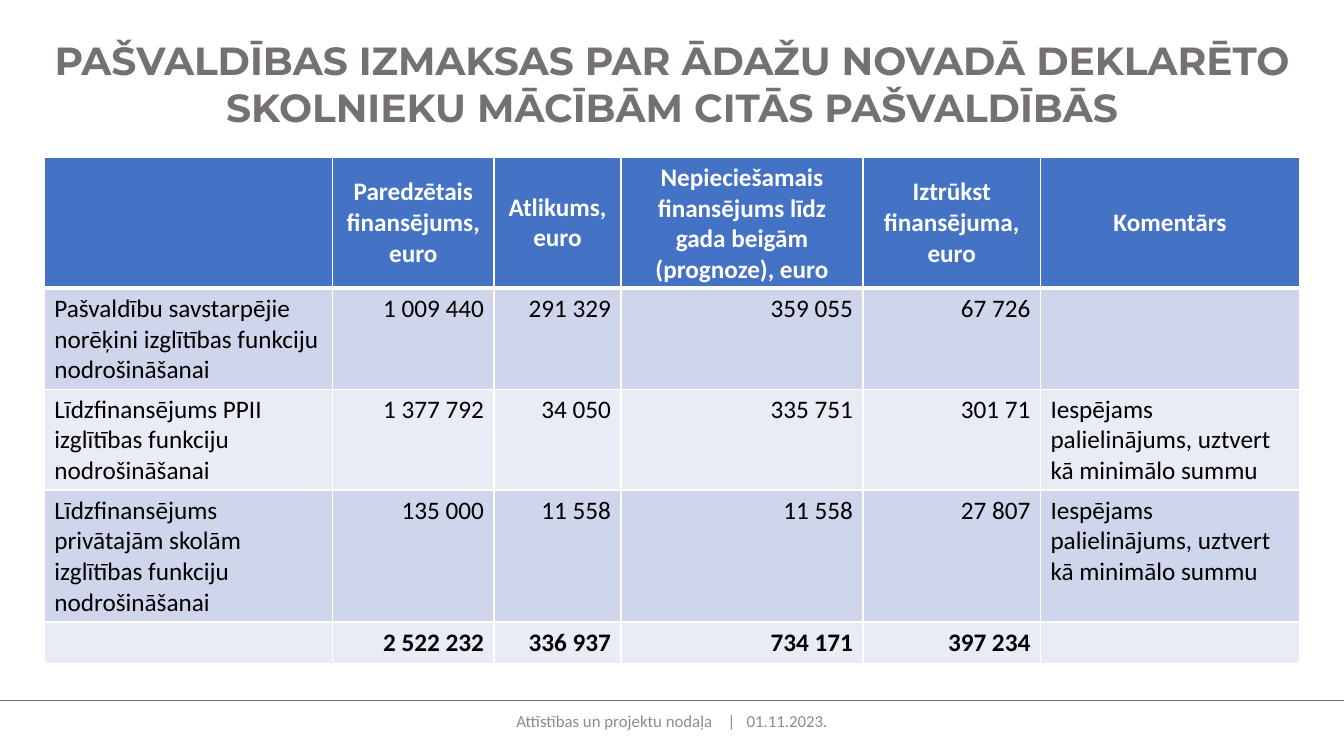
import pptx
import pptx.dml.color
import pptx.enum.shapes
import pptx.enum.text
import pptx.oxml
import pptx.oxml.ns
import pptx.util

WIDTH = pptx.util.Inches(13.33)
HEIGHT = pptx.util.Inches(7.5)
MARGIN = 0.033
CONTENT = 1 - 2 * MARGIN
RULE_Y = 0.927
GREY = "767171"
WHITE = "FFFFFF"
HEADER_FILL = "4472C4"
BAND_FILLS = ("E9EBF5", "CFD5EA")
COLUMN_WEIGHTS = (2.86, 1.6, 1.26, 2.4, 1.76, 2.57)
ROW_HEIGHTS = (1.29, 1, 1, 1.31, 0.41)
ALIGN = pptx.enum.text.PP_ALIGN
ANCHOR = pptx.enum.text.MSO_ANCHOR

TITLE = "PAŠVALDĪBAS IZMAKSAS PAR ĀDAŽU NOVADĀ DEKLARĒTO SKOLNIEKU MĀCĪBĀM CITĀS PAŠVALDĪBĀS"
FOOTER = (("Attīstības un projektu nodaļa", 0), (" ", 800), ("|", 0), (" ", 540), ("01.11.2023.", 0))
COMMENT = "Iespējams palielinājums, uztvert kā minimālo summu"
COSTS = (
    ("", "Paredzētais finansējums, euro", "Atlikums, euro",
     "Nepieciešamais finansējums līdz gada beigām (prognoze), euro",
     "Iztrūkst finansējuma, euro", "Komentārs"),
    ("Pašvaldību savstarpējie norēķini izglītības funkciju nodrošināšanai",
     "1 009 440", "291 329", "359 055", "67 726", ""),
    ("Līdzfinansējums PPII izglītības funkciju nodrošināšanai",
     "1 377 792", "34 050", "335 751", "301 71", COMMENT),
    ("Līdzfinansējums privātajām skolām izglītības funkciju nodrošināšanai",
     "135 000", "11 558", "11 558", "27 807", COMMENT),
    ("", "2 522 232", "336 937", "734 171", "397 234", ""),
)


def color(value):
    return pptx.dml.color.RGBColor.from_string(value)


def area(left, top, width, height):
    return int(left * WIDTH), int(top * HEIGHT), int(width * WIDTH), int(height * HEIGHT)


def format_paragraph(paragraph, alignment, font_name, size, font_color, bold=False):
    paragraph.alignment = alignment
    for run in paragraph.runs:
        run.font.name = font_name
        run.font.size = pptx.util.Pt(size)
        run.font.bold = bold
        run.font.color.rgb = color(font_color)


def add_title(slide):
    title = slide.shapes.title
    title.left, title.top, title.width, title.height = area(MARGIN, 0.041, CONTENT, 0.139)
    frame = title.text_frame
    frame.text = TITLE
    frame.word_wrap = True
    frame.auto_size = pptx.enum.text.MSO_AUTO_SIZE.SHAPE_TO_FIT_TEXT
    frame.vertical_anchor = ANCHOR.TOP
    format_paragraph(frame.paragraphs[0], ALIGN.CENTER, "Montserrat", 28, GREY, True)


def add_footer(slide):
    rule_y = int(RULE_Y * HEIGHT)
    rule = slide.shapes.add_connector(
        pptx.enum.shapes.MSO_CONNECTOR.STRAIGHT, 0, rule_y, WIDTH, rule_y)
    rule.line.color.rgb = color(GREY)
    rule.line.width = pptx.util.Pt(0.5)
    properties = rule._element.spPr
    properties.append(pptx.oxml.parse_xml(f"<a:effectLst {pptx.oxml.ns.nsdecls('a')}/>"))
    footer = slide.shapes.add_textbox(*area(0.3315, RULE_Y, 0.337, 0.053))
    frame = footer.text_frame
    frame.word_wrap = True
    frame.vertical_anchor = ANCHOR.MIDDLE
    paragraph = frame.paragraphs[0]
    for text, spacing in FOOTER:
        run = paragraph.add_run()
        run.text = text
        run.font._element.set("spc", str(spacing))
    format_paragraph(paragraph, ALIGN.CENTER, "Calibri", 12, "8C8C8C")


def set_borders(cell, top, bottom):
    properties = cell._tc.get_or_add_tcPr()
    for side, points in (("L", 1), ("R", 1), ("T", top), ("B", bottom)):
        properties.append(pptx.oxml.parse_xml(
            f'<a:ln{side} {pptx.oxml.ns.nsdecls("a")} w="{pptx.util.Pt(points)}">'
            f'<a:solidFill><a:srgbClr val="{WHITE}"/></a:solidFill></a:ln{side}>'))


def fill_cell(cell, text, row, column):
    header = row == 0
    set_borders(cell, 3 if row == 1 else 1, 3 if header else 1)
    cell.fill.solid()
    cell.fill.fore_color.rgb = color(HEADER_FILL if header else BAND_FILLS[row % 2])
    cell.vertical_anchor = ANCHOR.MIDDLE if header else ANCHOR.TOP
    cell.text_frame.text = text
    numeric = 0 < column < len(COLUMN_WEIGHTS) - 1
    alignment = ALIGN.CENTER if header else ALIGN.RIGHT if numeric else ALIGN.LEFT
    bold = row in (0, len(COSTS) - 1)
    format_paragraph(cell.text_frame.paragraphs[0], alignment, "Calibri", 18,
                     WHITE if header else "000000", bold)


def add_cost_table(slide):
    bounds = area(MARGIN, 0.208, CONTENT, 0.668)
    table = slide.shapes.add_table(len(COSTS), len(COLUMN_WEIGHTS), *bounds).table
    for column, weight in zip(table.columns, COLUMN_WEIGHTS):
        column.width = int(bounds[2] * weight / sum(COLUMN_WEIGHTS))
    for row, height in zip(table.rows, ROW_HEIGHTS):
        row.height = int(bounds[3] * height / sum(ROW_HEIGHTS))
    for row, texts in enumerate(COSTS):
        for column, text in enumerate(texts):
            fill_cell(table.cell(row, column), text, row, column)


def main():
    presentation = pptx.Presentation()
    presentation.slide_width = WIDTH
    presentation.slide_height = HEIGHT
    slide = presentation.slides.add_slide(presentation.slide_layouts[5])
    add_footer(slide)
    add_title(slide)
    add_cost_table(slide)
    presentation.save("out.pptx")


if __name__ == "__main__":
    main()
